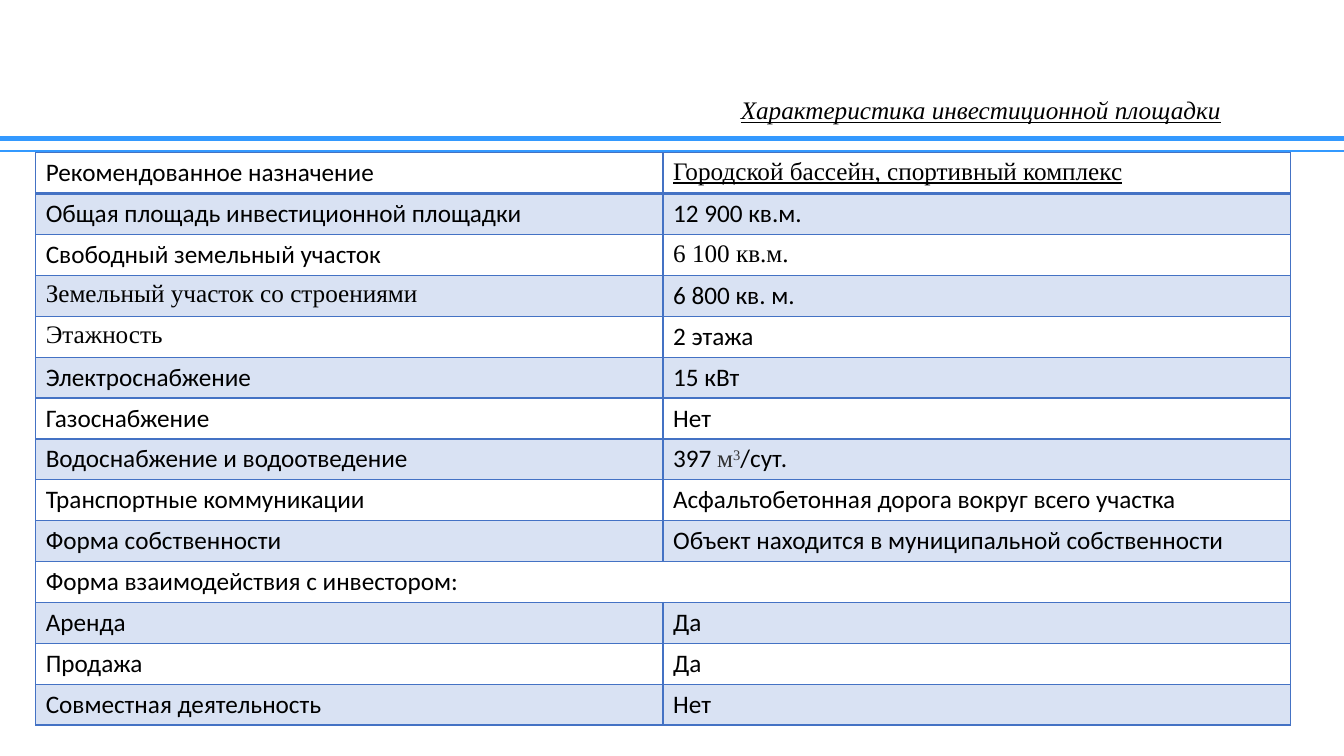
from lxml.etree import SubElement
from pptx import Presentation
from pptx.dml.color import RGBColor
from pptx.enum.shapes import MSO_CONNECTOR as CONN
from pptx.enum.text import MSO_ANCHOR as ANCHOR, PP_ALIGN as ALIGN
from pptx.oxml.ns import qn
from pptx.util import Cm, Pt

COLORS = {"rule": "3399FF", "grid": "4472C4", "text": "000000", "unit": "333333"}
SANS, SERIF = "Calibri", "Times New Roman"
VOLUME = [("397 ", SANS, "text", 0), ("м", SERIF, "unit", 0),
          ("3", SERIF, "unit", 30000), ("/сут.", SANS, "text", 0)]
ROWS = [
    ("Рекомендованное назначение", "Городской бассейн, спортивный комплекс"),
    ("Общая площадь инвестиционной площадки", "12 900 кв.м."),
    ("Свободный земельный участок", "6 100 кв.м."),
    ("Земельный участок со строениями", "6 800 кв. м."),
    ("Этажность", "2 этажа"),
    ("Электроснабжение", "15 кВт"),
    ("Газоснабжение", "Нет"),
    ("Водоснабжение и водоотведение", VOLUME),
    ("Транспортные коммуникации", "Асфальтобетонная дорога вокруг всего участка"),
    ("Форма собственности", "Объект находится в муниципальной собственности"),
    ("Форма взаимодействия с инвестором:", None),
    ("Аренда", "Да"),
    ("Продажа", "Да"),
    ("Совместная деятельность", "Нет"),
]
SERIF_CELLS = {(0, 1), (2, 1), (3, 0), (4, 0)}


class SlideBuilder:
    def __init__(self, prs):
        self.s = prs.slides.add_slide(prs.slide_layouts[5])
        self.width = prs.slide_width

    def style(self, font, name=SANS, color="text"):
        font.name, font.size = name, Pt(18)
        font.color.rgb = RGBColor.from_string(COLORS[color])

    def rule(self, y, weight):
        line = self.s.shapes.add_connector(CONN.STRAIGHT, 0, Cm(y), self.width, Cm(y))
        line.line.color.rgb = RGBColor.from_string(COLORS["rule"])
        line.line.width = Pt(weight)
        SubElement(line._element.spPr, qn("a:effectLst"))

    def title(self, text, x, y, w, h):
        sp = self.s.shapes.title
        sp.left, sp.top, sp.width, sp.height = Cm(x), Cm(y), Cm(w), Cm(h)
        tf = sp.text_frame
        tf.text, tf.word_wrap, tf.vertical_anchor = text, True, ANCHOR.MIDDLE
        p = tf.paragraphs[0]
        p.alignment, p.line_spacing = ALIGN.CENTER, 0.9
        self.style(p.font, SERIF)
        p.font.italic = p.font.underline = True

    def border(self, cell, side, weight):
        ln = SubElement(cell._tc.get_or_add_tcPr(), qn(f"a:ln{side}"), w=str(Pt(weight)))
        SubElement(SubElement(ln, qn("a:solidFill")), qn("a:srgbClr"), val=COLORS["grid"])

    def band(self, cell):
        cell.fill.solid()
        cell.fill.fore_color.rgb = RGBColor.from_string(COLORS["grid"])
        clr = cell._tc.tcPr.find(qn("a:solidFill")).find(qn("a:srgbClr"))
        SubElement(clr, qn("a:alpha"), val="20000")

    def cell(self, cell, row, col, content):
        for side in "LRTB":
            heavy = (row, side) in ((0, "B"), (1, "T"))
            self.border(cell, side, 2 if heavy else 1)
        if row % 2:
            self.band(cell)
        else:
            cell.fill.background()
        p = cell.text_frame.paragraphs[0]
        if isinstance(content, str):
            p.text = content
            self.style(p.font, SERIF if (row, col) in SERIF_CELLS else SANS)
            return
        for text, name, color, baseline in content:
            r = p.add_run()
            r.text = text
            self.style(r.font, name, color)
            if baseline:
                r._r.get_or_add_rPr().set("baseline", str(baseline))

    def table(self, rows, x, y, w, row_h):
        frame = self.s.shapes.add_table(len(rows), 2, Cm(x), Cm(y), Cm(w), Cm(row_h * len(rows)))
        table = frame.table
        table.first_row = table.horz_banding = False
        for i, values in enumerate(rows):
            table.rows[i].height = Cm(row_h)
            if values[1] is None:
                table.cell(i, 0).merge(table.cell(i, 1))
            for j, value in enumerate(values):
                if value is not None:
                    self.cell(table.cell(i, j), i, j, value)
        p = table.cell(0, 1).text_frame.paragraphs[0]
        p.alignment, p.font.underline = ALIGN.JUSTIFY, True


def main():
    prs = Presentation()
    prs.slide_width, prs.slide_height = Cm(33.87), Cm(19.05)
    slide = SlideBuilder(prs)
    slide.rule(3.5, 3.5)
    slide.rule(3.81, 1.5)
    slide.title("Характеристика инвестиционной площадки", 16.93, 2.46, 15.58, 0.7)
    slide.table(ROWS, 0.9, 3.85, 31.62, 1.03)
    prs.save("out.pptx")


if __name__ == "__main__":
    main()
